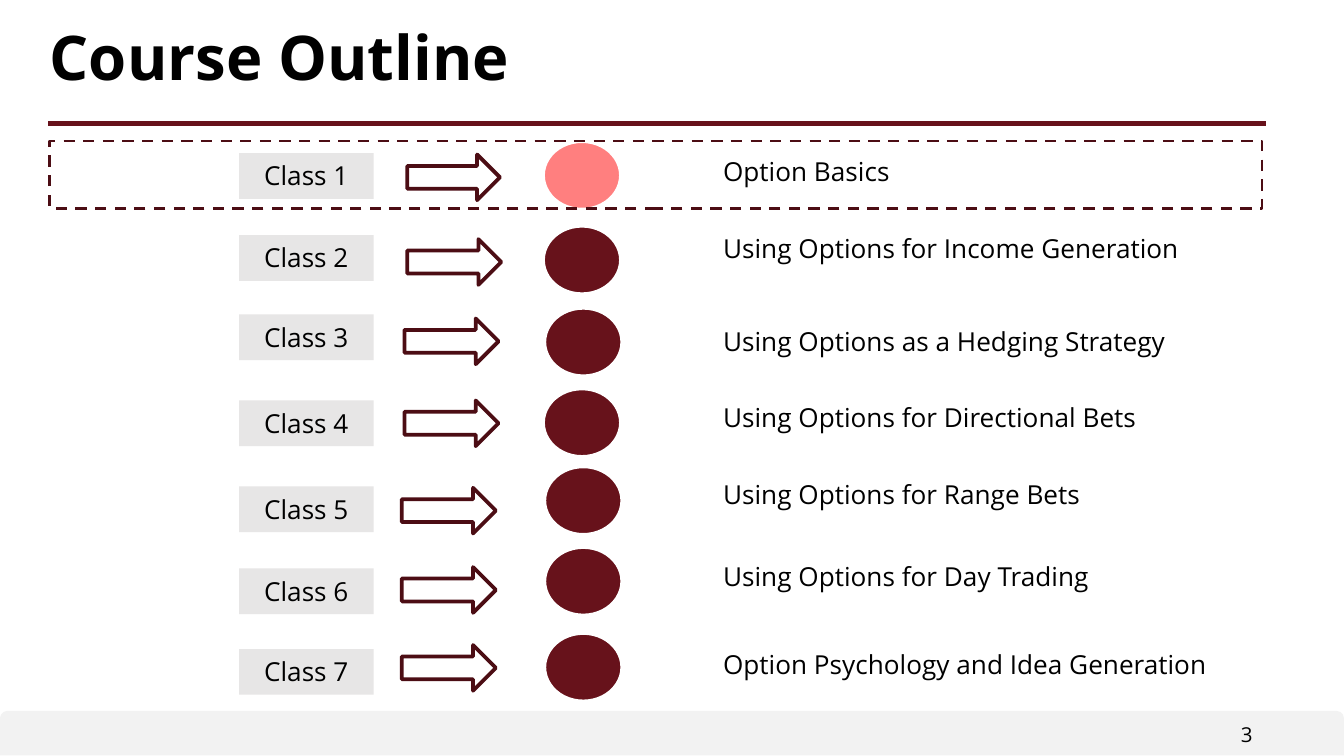
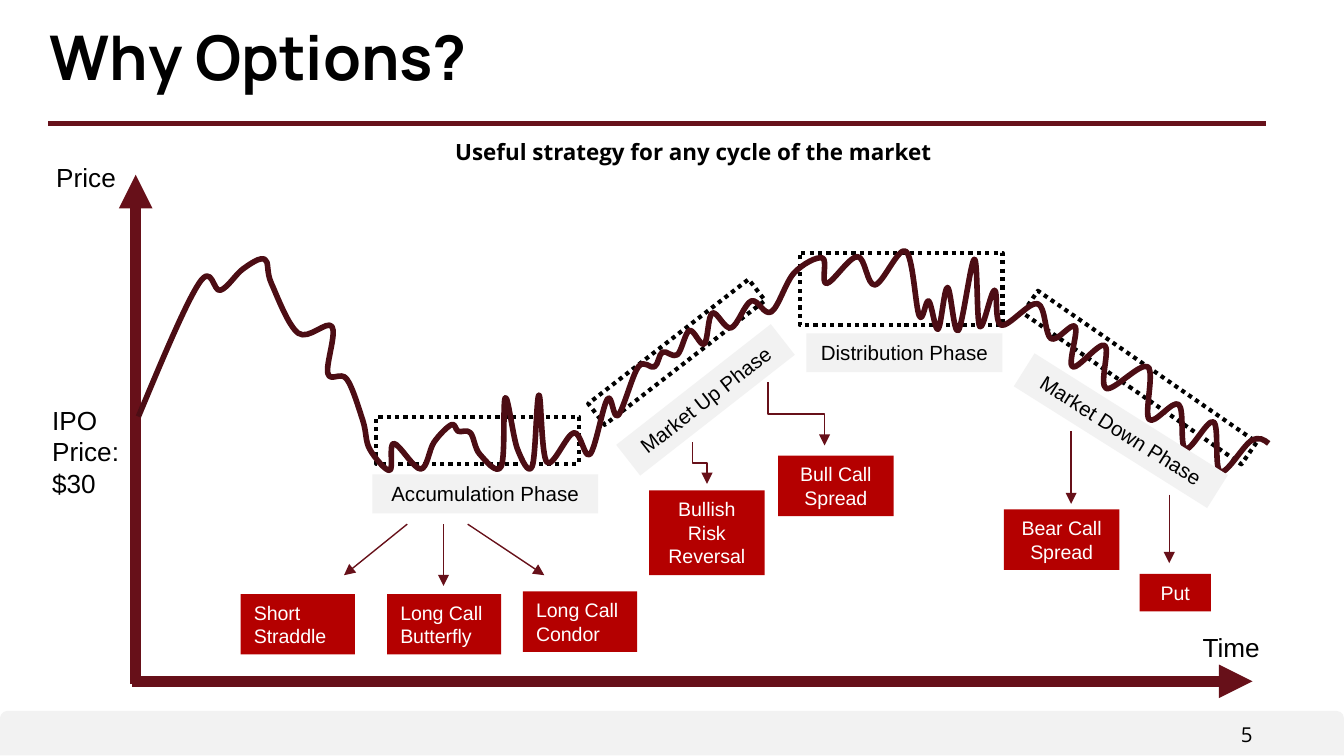
from lxml.etree import SubElement
from pptx import Presentation
from pptx.dml.color import RGBColor
from pptx.enum.dml import MSO_LINE
from pptx.enum.shapes import MSO_CONNECTOR, MSO_SHAPE
from pptx.enum.text import MSO_ANCHOR, PP_ALIGN
from pptx.oxml.ns import qn
from pptx.util import Pt

PX = 9144  # one px is a hundredth of an inch
PAGE = (0, 0, 1000, 562)
BODY = (0, 100, 1000, 429)

MAROON, AXIS, DARK = "67121B", "671019", "4C0D14"
RED, BLACK, WHITE = "B40000", "000000", "FFFFFF"
BAND, LABEL, PINK = "F2F2F2", "E7E6E6", "FF0000"

LEFT, CENTER, RIGHT = PP_ALIGN.LEFT, PP_ALIGN.CENTER, PP_ALIGN.RIGHT
PLAIN = dict(name="Open Sans", size=Pt(14), bold=False)
TITLE = dict(PLAIN, size=Pt(33), bold=True)
SUBTITLE = dict(PLAIN, size=Pt(12), bold=True)
NUMBER = dict(PLAIN, size=Pt(11))
AXIS_TEXT = dict(PLAIN, name="Arial")
PHASE = dict(AXIS_TEXT, size=Pt(11))
STRATEGY = dict(AXIS_TEXT, size=Pt(10.5))
SHAPE_INSETS, PAGE_INSETS, ROW_INSETS = (10, 5), (7, 4), (0, 3)


def rgb(value):
    return RGBColor.from_string(value)


def place(box, x, y, w, h):
    """Return the EMU rectangle of a part inside a box."""
    return [v * PX for v in (box[0] + x, box[1] + y, w, h)]


def write(sp, text, fmt, color=BLACK, align=LEFT, insets=SHAPE_INSETS,
          anchor=MSO_ANCHOR.TOP, spacing=None):
    tf = sp.text_frame
    dx, dy = (v * PX for v in insets)
    frame = dict(word_wrap=True, vertical_anchor=anchor, margin_left=dx,
                 margin_right=dx, margin_top=dy, margin_bottom=dy)
    for key, value in frame.items():
        setattr(tf, key, value)
    p = tf.paragraphs[0]
    p.alignment = align
    if spacing:
        p.line_spacing = spacing
    r = p.add_run()
    r.text = text
    for key, value in fmt.items():
        setattr(r.font, key, value)
    r.font.color.rgb = rgb(color)
    return p


def add_text(s, rect, text, fmt, **options):
    return write(s.shapes.add_textbox(*rect), text, fmt, **options)


def style_line(line, color, width, dash=None):
    line.color.rgb = rgb(color)
    line.width = Pt(width)
    if dash:
        line.dash_style = dash


def add_shape(s, kind, rect, fill=None, line=None, rotation=0):
    sp = s.shapes.add_shape(kind, *rect)
    sp.shadow.inherit = False
    sp.rotation = rotation
    if fill:
        sp.fill.solid()
        sp.fill.fore_color.rgb = rgb(fill)
    else:
        sp.fill.background()
    if line:
        style_line(sp.line, *line)
    else:
        sp.line.fill.background()
    return sp


def add_line(s, box, start, end, color, width, arrow=True,
             kind=MSO_CONNECTOR.STRAIGHT):
    ends = [(box[i % 2] + v) * PX for i, v in enumerate((*start, *end))]
    c = s.shapes.add_connector(kind, *ends)
    style_line(c.line, color, width)
    if arrow:
        SubElement(c.line._get_or_add_ln(), qn("a:tailEnd"), type="triangle")
    SubElement(c._element.spPr, qn("a:effectLst"))
    return c


def add_step_arrow(s, box, start, end):
    """Draw an elbow that leaves downwards: a flipped elbow turned by 270 degrees."""
    (x1, y1), (x2, y2) = start, end
    cx, cy, dx, dy = (x1 + x2) / 2, (y1 + y2) / 2, (x2 - x1) / 2, (y2 - y1) / 2
    c = add_line(s, box, (int(cx + dy), int(cy - dx)), (int(cx - dy), int(cy + dx)),
                 AXIS, 0.75, kind=MSO_CONNECTOR.ELBOW)
    c._element.spPr.find(qn("a:xfrm")).set("rot", str(270 * 60000))


def add_curve(s, box, points, color, width):
    """Draw a smooth curve through all the points."""
    pts = [((box[0] + x) * PX, (box[1] + y) * PX) for x, y in points]
    builder = s.shapes.build_freeform(*pts[0], scale=1.0)
    builder.add_line_segments(pts[1:], close=False)
    sp = builder.convert_to_shape()
    sp.shadow.inherit = False
    sp.fill.background()
    style_line(sp.line, color, width)

    left, top = min(x for x, _ in pts), min(y for _, y in pts)
    pts = [(x - left, y - top) for x, y in pts]
    slopes = [((c[0] - a[0]) / 6, (c[1] - a[1]) / 6) for a, c in zip(pts, pts[2:])]
    before = [(p[0] - m[0], p[1] - m[1]) for p, m in zip(pts[1:], slopes)]
    after = [(p[0] + m[0], p[1] + m[1]) for p, m in zip(pts[1:], slopes)]

    def middle(a, b):
        return (a[0] + b[0]) / 2, (a[1] + b[1]) / 2

    after.insert(0, middle(pts[0], before[0]))
    before.append(middle(pts[-1], after[-1]))
    outline = sp._element.find(".//" + qn("a:path"))
    for segment in outline.findall(qn("a:lnTo")):
        outline.remove(segment)
    for controls in zip(after, before, pts[1:]):
        curve = SubElement(outline, qn("a:cubicBezTo"))
        for x, y in controls:
            SubElement(curve, qn("a:pt"), x=str(round(x)), y=str(round(y)))


def page_frame(prs, box, title, font, number):
    s = prs.slides.add_slide(prs.slide_layouts[6])
    # Footer band and page number
    band = add_shape(s, MSO_SHAPE.ROUND_2_SAME_RECTANGLE,
                     place(box, 0, 529, 1000, 33), BAND)
    band.adjustments[0] = 0.167
    add_text(s, place(box, 812, 533, 127, 25), number, NUMBER,
             align=RIGHT, insets=PAGE_INSETS)
    # Title and rule
    add_line(s, box, (36, 92), (942, 92), MAROON, 2.5, arrow=False)
    add_text(s, place(box, 30, 16, 931, 68), title, dict(TITLE, name=font),
             insets=PAGE_INSETS, spacing=0.9)
    return s


# Topic, its top, oval left and top, label top, arrow left, top and width
CLASSES = [
    ("Option Basics", -1, 404, 5, 14, 303, 15, 69),
    ("Using Options for Income Generation", 56, 404, 68, 75, 303, 78, 70),
    ("Using Options as a Hedging Strategy", 125, 405, 129, 134, 301, 137, 70),
    ("Using Options for Directional Bets", 182, 404, 189, 198, 301, 198, 70),
    ("Using Options for Range Bets", 239, 405, 247, 262, 299, 263, 70),
    ("Using Options for Day Trading", 300, 405, 307, 323, 299, 322, 70),
    ("Option Psychology and Idea Generation", 366, 405, 371, 383, 299, 380, 70),
]


def class_list(s, box):
    for i, row in enumerate(CLASSES, 1):
        topic, topic_y, oval_x, oval_y, label_y, arrow_x, arrow_y, arrow_w = row
        oval = add_shape(s, MSO_SHAPE.OVAL, place(box, oval_x, oval_y, 58, 51),
                         PINK if i == 1 else MAROON, (WHITE, 2))
        if i == 1:
            color = oval._element.spPr.find(qn("a:solidFill"))[0]
            SubElement(color, qn("a:alpha"), val="50000")
        add_text(s, place(box, 538, topic_y, 371, 60), topic, PLAIN,
                 insets=ROW_INSETS, anchor=MSO_ANCHOR.MIDDLE, spacing=0.9)
        label = add_shape(s, MSO_SHAPE.RECTANGLE, place(box, 178, label_y, 100, 34), LABEL)
        write(label, f"Class {i}", PLAIN, align=CENTER)
        add_shape(s, MSO_SHAPE.RIGHT_ARROW, place(box, arrow_x, arrow_y, arrow_w, 34),
                  line=(DARK, 2))
    # Frame round the current class
    add_shape(s, MSO_SHAPE.RECTANGLE, place(box, 37, 5, 902, 50),
              line=(DARK, 1.5, MSO_LINE.DASH))


AXIS_LABELS = [("Time", 885, 365, 67, 34), ("Price", 32, 15, 68, 34),
               ("IPO Price: $30", 29, 196, 83, 81)]
# Left, top, width, height, rotation
PHASE_FRAMES = [(595, 88, 151, 54, 0), (280, 210, 151, 35, 0),
                (428, 152, 151, 20, 322.2), (749, 171, 198, 20, 34.7)]
PHASES = [("Accumulation Phase", 277, 253, 168, 0), ("Market Up Phase", 452, 183, 146, 322),
          ("Distribution Phase", 600, 148, 146, 0), ("Market Down Phase", 749, 206, 170, 32.2)]
PRICES = [
    (103, 210), (148, 111), (164, 116), (181, 100), (197, 93), (202, 111), (222, 148),
    (247, 143), (244, 178), (258, 182), (270, 213), (275, 234), (290, 250), (293, 230),
    (313, 249), (323, 229), (336, 216), (341, 221), (350, 222), (357, 238), (373, 247),
    (376, 196), (385, 234), (396, 247), (401, 194), (407, 244), (427, 222), (439, 238),
    (452, 197), (460, 209), (475, 173), (487, 173), (493, 162), (504, 164), (513, 146),
    (524, 156), (530, 133), (544, 144), (559, 124), (574, 132), (591, 103), (612, 92),
    (615, 111), (638, 91), (651, 112), (674, 87), (684, 135), (691, 124), (698, 145),
    (705, 114), (713, 146), (725, 93), (729, 143), (740, 116), (745, 142), (772, 126),
    (782, 152), (800, 143), (798, 173), (822, 157), (823, 189), (854, 173), (855, 212),
    (877, 201), (882, 234), (903, 214), (908, 251), (931, 228), (944, 230),
]
STRATEGY_ARROWS = [((303, 290), (256, 328)), ((330, 290), (330, 336)),
                   ((348, 290), (405, 328)), ((797, 221), (797, 275)),
                   ((870, 268), (870, 319))]
STEP_ARROWS = [((515, 229), (526, 260)), ((572, 185), (614, 232))]
STRATEGIES = [
    ("Short Straddle", 179, 342, 85, 45, LEFT),
    ("Long Call Butterfly", 288, 342, 85, 45, LEFT),
    ("Long Call Condor", 389, 340, 85, 45, LEFT),
    ("Bullish Risk Reversal", 483, 265, 86, 63, CENTER),
    ("Bull Call Spread", 579, 239, 86, 45, CENTER),
    ("Bear Call Spread", 747, 279, 86, 45, CENTER),
    ("Put", 848, 327, 53, 28, CENTER),
]


def market_cycle(s, box):
    p = add_text(s, place(box, 113, 1, 791, 41),
                 "Useful strategy for any cycle of the market",
                 SUBTITLE, align=CENTER, insets=PAGE_INSETS, spacing=0.9)
    for key, value in dict(marL=15 * PX, indent=0).items():
        p._p.get_or_add_pPr().set(key, str(value))
    # Axes
    add_line(s, box, (98, 407), (932, 407), AXIS, 6)
    add_line(s, box, (101, 409), (101, 30), AXIS, 6)
    for text, *rect in AXIS_LABELS:
        add_text(s, place(box, *rect), text, AXIS_TEXT)
    # Price curve with its phases
    for *rect, rotation in PHASE_FRAMES:
        add_shape(s, MSO_SHAPE.RECTANGLE, place(box, *rect),
                  line=(BLACK, 2.25, MSO_LINE.ROUND_DOT), rotation=rotation)
    add_curve(s, box, PRICES, DARK, 3)
    for text, x, y, w, rotation in PHASES:
        sp = add_shape(s, MSO_SHAPE.RECTANGLE, place(box, x, y, w, 29), BAND,
                       rotation=rotation)
        write(sp, text, PHASE, align=CENTER)
    # Strategies for each phase
    for start, end in STRATEGY_ARROWS:
        add_line(s, box, start, end, AXIS, 0.75)
    for text, *rect, align in STRATEGIES:
        sp = add_shape(s, MSO_SHAPE.RECTANGLE, place(box, *rect), RED)
        write(sp, text, STRATEGY, WHITE, align)
    for start, end in STEP_ARROWS:
        add_step_arrow(s, box, start, end)


def main():
    prs = Presentation()
    prs.slide_width = PAGE[2] * PX
    prs.slide_height = prs.slide_width * 9 // 16
    class_list(page_frame(prs, PAGE, "Course Outline", "Open Sans", "3"), BODY)
    market_cycle(page_frame(prs, PAGE, "Why Options?", "Manrope", "5"), BODY)
    prs.save("out.pptx")


if __name__ == "__main__":
    main()
